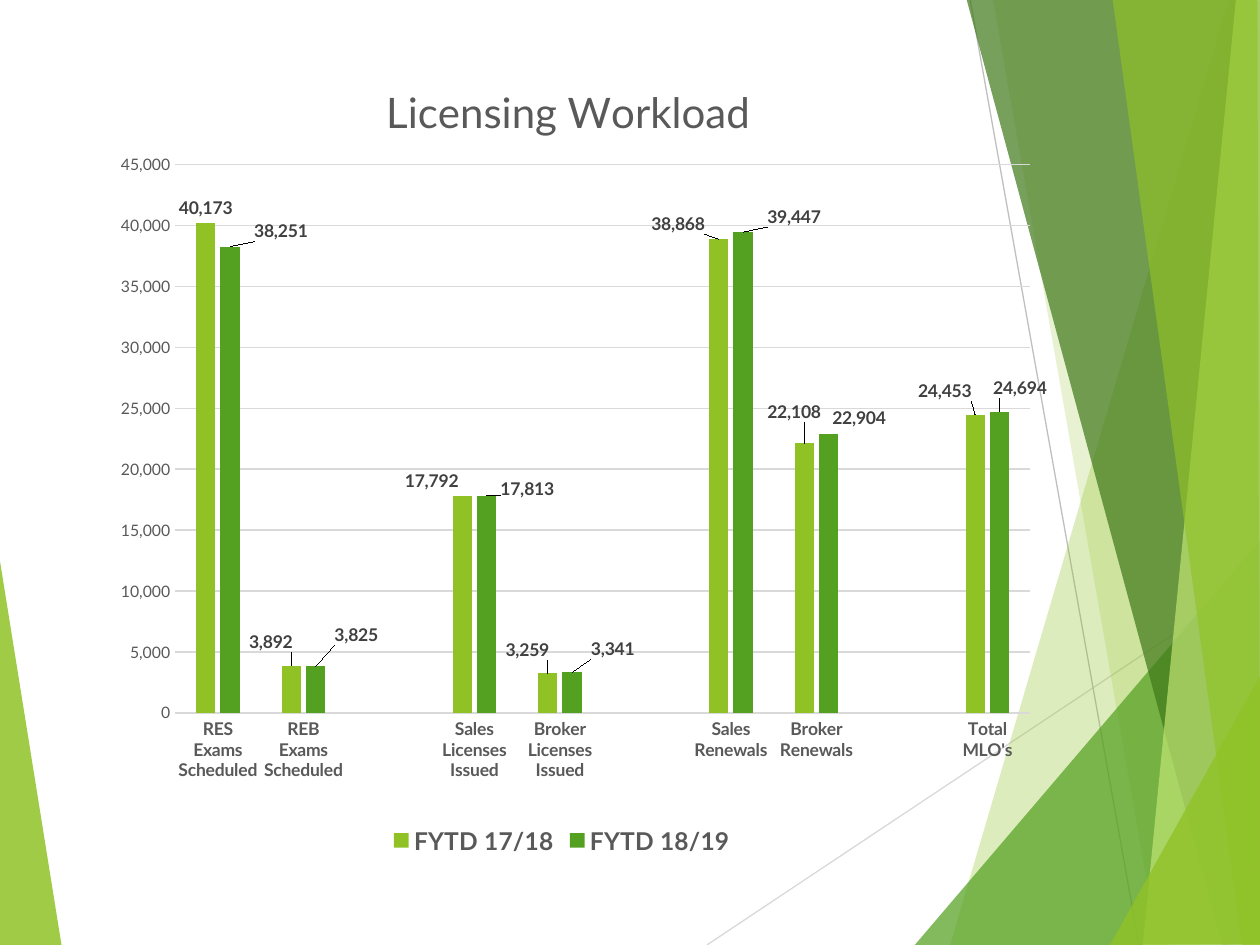
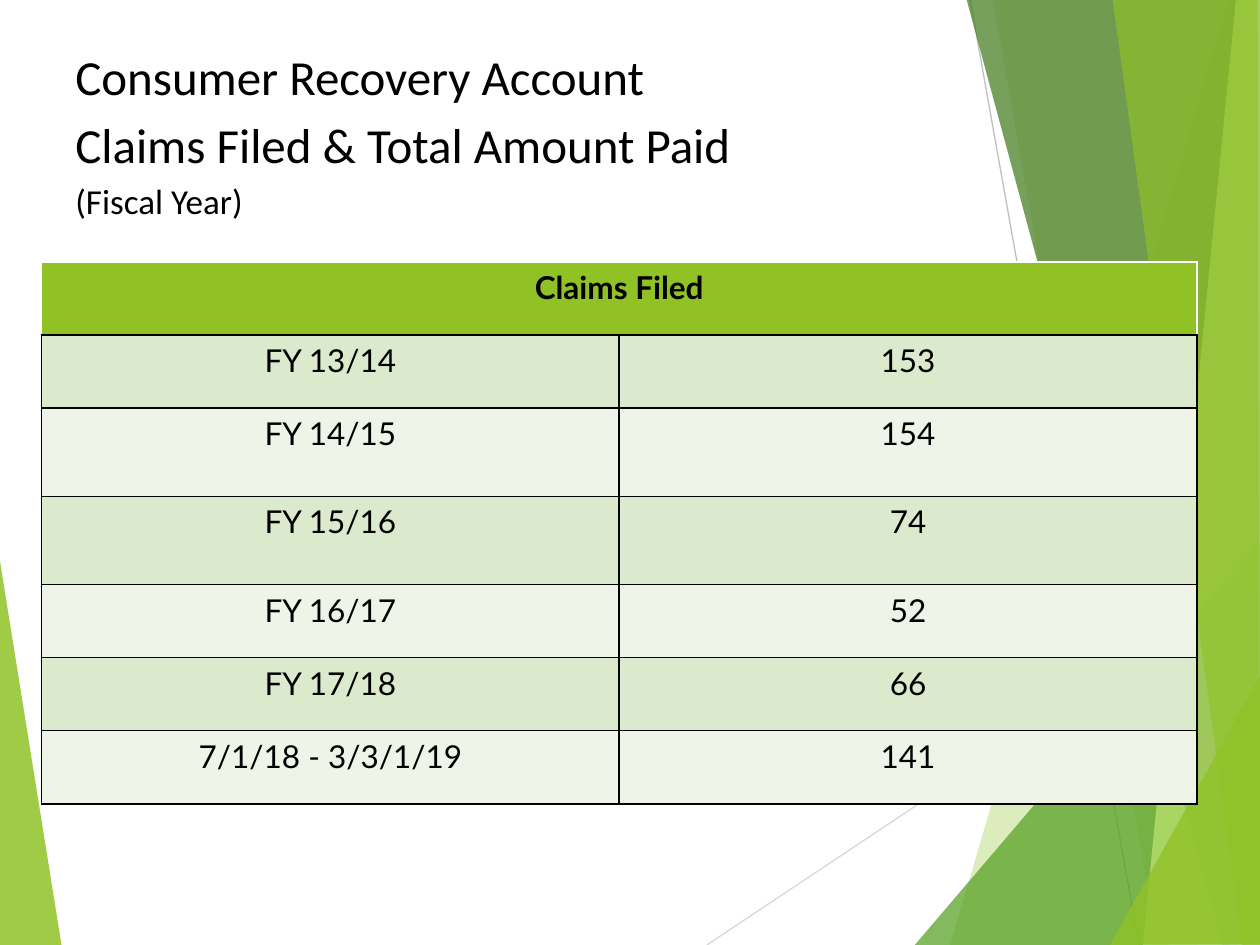
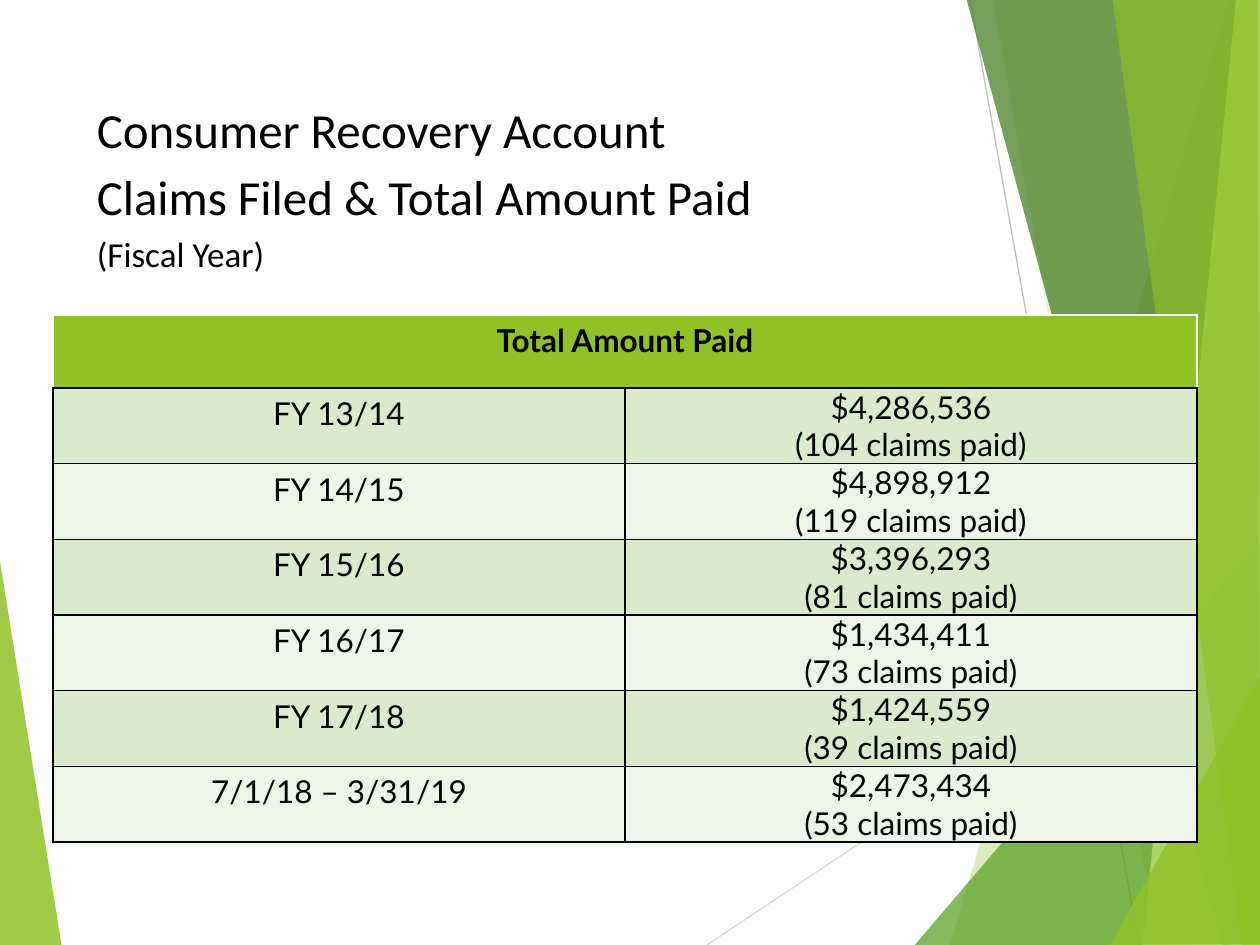
from dataclasses import dataclass

import pptx
import pptx.chart.data
import pptx.dml.color
import pptx.enum.chart
import pptx.enum.shapes
import pptx.enum.text
import pptx.oxml
import pptx.oxml.ns
import pptx.util

Inches = pptx.util.Inches
Pt = pptx.util.Pt


@dataclass(frozen=True)
class Theme:
    lime: str = "90C226"
    green: str = "54A021"
    forest: str = "3F7819"
    pale_lime: str = "C0E474"
    band_dark: str = "DBE9CD"
    band_light: str = "EEF4E8"
    black: str = "000000"
    white: str = "FFFFFF"
    chart_text: str = "595959"
    label_text: str = "404040"
    grid: str = "D9D9D9"
    ray: str = "BFBFBF"
    heading_font: str = "Calibri"
    body_font: str = "Lato"
    heading_size: int = 28
    subheading_size: int = 20
    table_size: int = 18
    chart_title_size: int = 24
    legend_size: int = 14
    label_size: int = 10
    axis_size: int = 9
    hairline: float = 0.75


THEME = Theme()

# Background facets: outline points in inches, colour, opacity in percent
LEFT_FACET = ([(-0.01, 4.39), (0.49, 7.51), (-0.01, 7.5)], THEME.lime, 85)
RAYS = [((5.61, 7.5), (10.01, 4.57), THEME.grid), ((7.7, 0), (9.04, 7.5), THEME.ray)]
RIGHT_FACETS = [
    ([(9.75, 0), (7.54, 7.5), (10.02, 7.51), (10.01, 0.01)], THEME.lime, 30),
    ([(7.88, -0.01), (9.19, 7.5), (10.01, 7.5), (10.01, -0.01)], THEME.lime, 20),
    ([(7.26, 7.5), (10, 4.29), (10.01, 7.5)], THEME.green, 72),
    ([(7.67, -0.01), (9.7, 7.5), (10.01, 7.49), (10.01, -0.01)], THEME.forest, 70),
    ([(9.81, -0.01), (9.07, 7.5), (10.01, 7.5), (10, -0.01)], THEME.pale_lime, 70),
    ([(8.83, -0.01), (9.86, 7.5), (10, 7.5), (9.98, -0.01)], THEME.lime, 65),
    ([(8.81, 7.5), (10.01, 5.35), (10.01, 7.49)], THEME.lime, 80),
]

CATEGORIES = ["RES Exams Scheduled", "REB Exams Scheduled", "",
              "Sales Licenses Issued", "Broker Licenses Issued", "",
              "Sales Renewals", "Broker Renewals", "", "Total MLO's"]
# Name, colour, values, and label shifts by category as fractions of the chart
WORKLOAD = [
    ("FYTD 17/18", THEME.lime,
     [40173, 3892, None, 17792, 3259, None, 38868, 22108, None, 24453],
     {1: (-0.02, -0.01), 3: (-0.03, 0), 4: (-0.02, -0.01), 6: (-0.04, 0),
      7: (-0.01, -0.02), 9: (-0.03, -0.01)}),
    ("FYTD 18/19", THEME.green,
     [38251, 3825, None, 17813, 3341, None, 39447, 22904, None, 24694],
     {0: (0.05, 0), 1: (0.04, -0.02), 3: (0.04, 0.01), 4: (0.04, -0.01),
      6: (0.05, 0), 7: (0.03, 0), 9: (0.02, -0.01)}),
]
NUMBER_FORMAT = "#,##0"

HEADING = ["Consumer Recovery Account", "Claims Filed & Total Amount Paid", "(Fiscal Year)"]
CLAIMS_FILED = [("FY 13/14", "153"), ("FY 14/15", "154"), ("FY 15/16", "74"),
                ("FY 16/17", "52"), ("FY 17/18", "66"), ("7/1/18 - 3/3/1/19", "141")]
AMOUNT_PAID = [("FY 13/14", "$4,286,536\n(104 claims paid)"),
               ("FY 14/15", "$4,898,912\n(119 claims paid)"),
               ("FY 15/16", "$3,396,293\n(81 claims paid)"),
               ("FY 16/17", "$1,434,411\n(73 claims paid)"),
               ("FY 17/18", "$1,424,559\n(39 claims paid)"),
               ("7/1/18 – 3/31/19", "$2,473,434\n(53 claims paid)")]


def rgb(color):
    return pptx.dml.color.RGBColor.from_string(color)


def style_font(font, size, color, name=THEME.body_font, bold=False):
    font.size, font.name, font.bold = Pt(size), name, bold
    font.color.rgb = rgb(color)


def set_fill(fill, color):
    fill.solid()
    fill.fore_color.rgb = rgb(color)


def set_line(line, color):
    line.width = Pt(THEME.hairline)
    line.color.rgb = rgb(color)


def parse_element(tag, inner, attributes=""):
    namespaces = pptx.oxml.ns.nsdecls(tag.split(":")[0])
    return pptx.oxml.parse_xml(f"<{tag} {namespaces} {attributes}>{inner}</{tag}>")


# Shared background
def add_facet(slide, points, color, opacity):
    corners = [(Inches(x), Inches(y)) for x, y in points]
    builder = slide.shapes.build_freeform(*corners[0], scale=1.0)
    builder.add_line_segments(corners[1:], close=True)
    shape = builder.convert_to_shape()
    shape.shadow.inherit = False
    set_fill(shape.fill, color)
    shape.line.fill.background()
    color_element = shape._element.spPr.find(".//" + pptx.oxml.ns.qn("a:srgbClr"))
    color_element.append(parse_element("a:alpha", "", f'val="{opacity * 1000}"'))


def add_ray(slide, start, end, color):
    ends = [Inches(value) for value in (*start, *end)]
    ray = slide.shapes.add_connector(pptx.enum.shapes.MSO_CONNECTOR.STRAIGHT, *ends)
    set_line(ray.line, color)
    ray._element.spPr.append(parse_element("a:effectLst", ""))


def add_background(slide):
    add_facet(slide, *LEFT_FACET)
    for ray in RAYS:
        add_ray(slide, *ray)
    for facet in RIGHT_FACETS:
        add_facet(slide, *facet)


# Chart
def set_layout(parent, index, x, y, size=None):
    """Place a chart part, or shift it from its default spot when it is a label."""
    for old_layout in parent.findall(pptx.oxml.ns.qn("c:layout")):
        parent.remove(old_layout)
    values = {}
    if size:
        values["layoutTarget"] = "inner"
    if parent.tag != pptx.oxml.ns.qn("c:dLbl"):
        values.update(xMode="edge", yMode="edge")
    values.update(x=x, y=y)
    if size:
        values.update(w=size[0], h=size[1])
    inner = "".join(f'<c:{key} val="{value}"/>' for key, value in values.items())
    parent.insert(index, parse_element("c:layout", f"<c:manualLayout>{inner}</c:manualLayout>"))


def style_axes(chart):
    tick_none = pptx.enum.chart.XL_TICK_MARK.NONE
    for axis in (chart.category_axis, chart.value_axis):
        axis.major_tick_mark = axis.minor_tick_mark = tick_none
    category_axis, value_axis = chart.category_axis, chart.value_axis
    style_font(category_axis.tick_labels.font, THEME.label_size, THEME.chart_text, bold=True)
    set_line(category_axis.format.line, THEME.grid)
    style_font(value_axis.tick_labels.font, THEME.axis_size, THEME.chart_text)
    value_axis.tick_labels.number_format = NUMBER_FORMAT
    value_axis.tick_labels.number_format_is_linked = False
    value_axis.minimum_scale, value_axis.maximum_scale = 0, 45000
    value_axis.major_unit = 5000
    value_axis.format.line.fill.background()
    set_line(value_axis.major_gridlines.format.line, THEME.grid)


def style_series(series, color, shifts):
    set_fill(series.format.fill, color)
    series.invert_if_negative = False
    outside_end = pptx.enum.chart.XL_LABEL_POSITION.OUTSIDE_END
    labels = series.data_labels
    labels.show_value = True
    labels.number_format = NUMBER_FORMAT
    labels.number_format_is_linked = False
    labels.position = outside_end
    style_font(labels.font, THEME.label_size, THEME.label_text, bold=True)
    for index in shifts:
        label = series.points[index].data_label
        style_font(label.font, THEME.label_size, THEME.label_text, bold=True)
        label.position = outside_end
    for element, shift in zip(series._element.xpath("c:dLbls/c:dLbl"), shifts.values()):
        set_layout(element, 1, *shift)
        element.insert(2, parse_element(
            "c:numFmt", "", f'formatCode="{NUMBER_FORMAT}" sourceLinked="0"'))


def add_workload_chart(slide, left, top, width, height):
    data = pptx.chart.data.CategoryChartData(number_format=NUMBER_FORMAT)
    data.categories = CATEGORIES
    for name, _, values, _ in WORKLOAD:
        data.add_series(name, values)
    chart = slide.shapes.add_chart(
        pptx.enum.chart.XL_CHART_TYPE.COLUMN_CLUSTERED,
        Inches(left), Inches(top), Inches(width), Inches(height), data).chart
    style_font(chart.font, THEME.label_size, THEME.black)

    chart.has_title = True
    title = chart.chart_title
    title.text_frame.text = "Licensing Workload"
    style_font(title.text_frame.paragraphs[0].runs[0].font,
               THEME.chart_title_size, THEME.chart_text)
    set_layout(title._element, 1, 0.32, 0.04)

    chart.has_legend = True
    chart.legend.position = pptx.enum.chart.XL_LEGEND_POSITION.BOTTOM
    chart.legend.include_in_layout = False
    style_font(chart.legend.font, THEME.legend_size, THEME.chart_text, bold=True)

    style_axes(chart)
    plot = chart.plots[0]
    plot.gap_width, plot.overlap, plot.vary_by_categories = 219, -27, False
    for series, (_, color, _, shifts) in zip(plot.series, WORKLOAD):
        style_series(series, color, shifts)
    set_layout(chart._chartSpace.chart.plotArea, 0, 0.12, 0.15, size=(0.84, 0.67))


# Heading and table
def add_heading(slide, left, top, width, height):
    box = slide.shapes.add_textbox(Inches(left), Inches(top), Inches(width), Inches(height))
    box.text_frame.word_wrap = True
    paragraph = box.text_frame.paragraphs[0]
    paragraph.text = "\v".join(HEADING)
    paragraph.line_spacing = 1.15
    paragraph.space_after = Pt(10)
    sizes = (THEME.heading_size, THEME.heading_size, THEME.subheading_size)
    for run, size in zip(paragraph.runs, sizes):
        style_font(run.font, size, THEME.black, THEME.heading_font)


def style_cell(cell, text, fill, edge, bold=False):
    cell.text_frame.text = text
    two_lines = "\n" in text
    cell.margin_left = cell.margin_right = Inches(0.07 if two_lines else 0.1)
    cell.margin_top = cell.margin_bottom = Inches(0 if two_lines else 0.05)
    for paragraph in cell.text_frame.paragraphs:
        paragraph.alignment = pptx.enum.text.PP_ALIGN.CENTER
        for run in paragraph.runs:
            style_font(run.font, THEME.table_size, THEME.black, bold=bold)
    set_fill(cell.fill, fill)
    borders = {"lnL": edge, "lnR": edge, "lnT": edge, "lnB": THEME.black}
    for index, (side, color) in enumerate(borders.items()):
        line = parse_element(
            f"a:{side}", f'<a:solidFill><a:srgbClr val="{color}"/></a:solidFill>',
            f'w="{Pt(1)}"')
        cell._tc.get_or_add_tcPr().insert(index, line)


def add_claims_table(slide, left, top, width, row_heights, header, rows):
    table = slide.shapes.add_table(
        len(rows) + 1, 2, Inches(left), Inches(top),
        Inches(width), Inches(sum(row_heights))).table
    table.horz_banding = False
    for row, height in zip(table.rows, row_heights):
        row.height = Inches(height)
    for cell, text in zip(table.rows[0].cells, (header, "")):
        style_cell(cell, text, THEME.lime, THEME.white, bold=True)
    table.cell(0, 0).merge(table.cell(0, 1))
    for row_index, texts in enumerate(rows, start=1):
        fill = THEME.band_dark if row_index % 2 else THEME.band_light
        for cell, text in zip(table.rows[row_index].cells, texts):
            style_cell(cell, text, fill, THEME.black)


def add_slide(presentation):
    slide = presentation.slides.add_slide(presentation.slide_layouts[6])
    set_fill(slide.background.fill, THEME.white)
    add_background(slide)
    return slide


def main():
    presentation = pptx.Presentation()
    presentation.slide_width, presentation.slide_height = Inches(10), Inches(7.5)

    add_workload_chart(add_slide(presentation), 0.42, 0.33, 8.08, 6.5)

    filed_slide = add_slide(presentation)
    add_heading(filed_slide, 0.5, 0.25, 9, 1.57)
    add_claims_table(filed_slide, 0.33, 2.08, 9.17,
                     [0.58, 0.58, 0.7, 0.7, 0.58, 0.58, 0.58], "Claims Filed", CLAIMS_FILED)

    paid_slide = add_slide(presentation)
    add_heading(paid_slide, 0.67, 0.67, 6.94, 1.57)
    add_claims_table(paid_slide, 0.42, 2.5, 9.08,
                     [0.58] + [0.6] * 6, "Total Amount Paid", AMOUNT_PAID)

    presentation.save("out.pptx")


if __name__ == "__main__":
    main()
